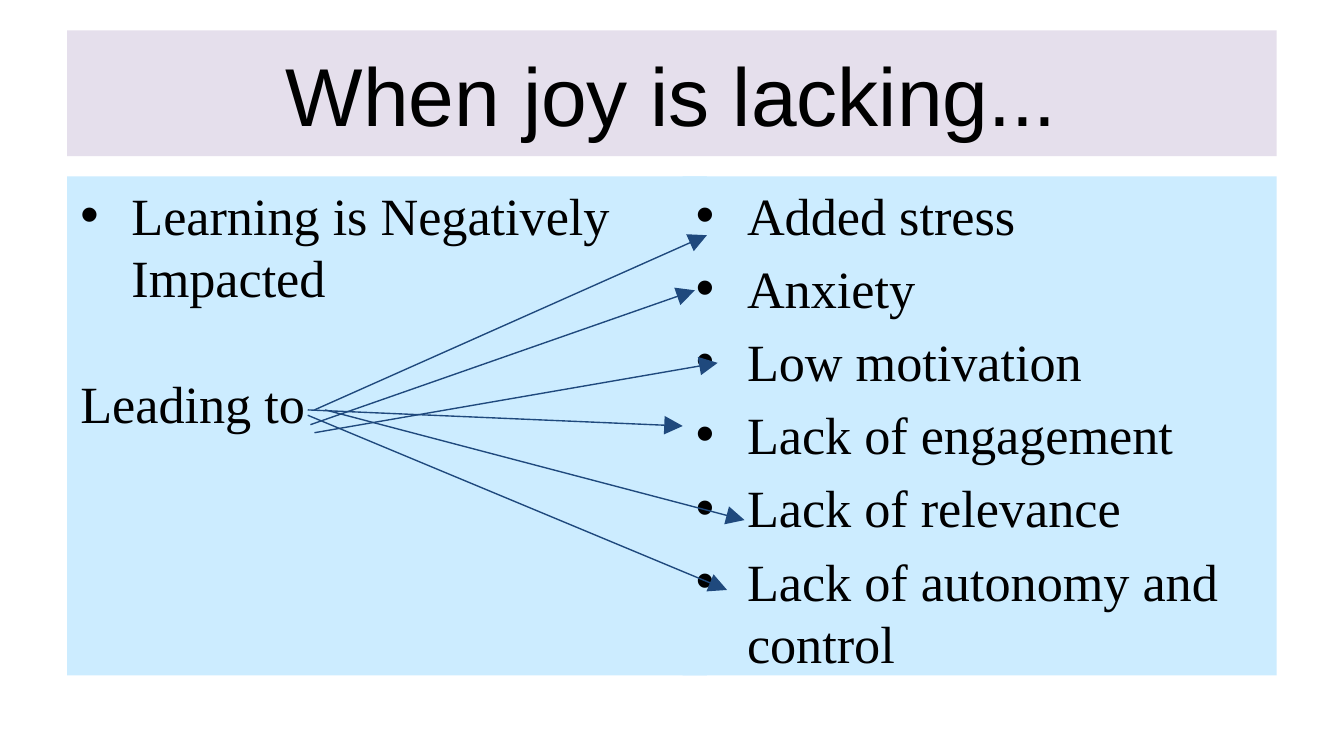
import pptx
import pptx.util
import pptx.dml.color
import pptx.enum.shapes
import pptx.enum.text
import pptx.oxml.ns
import lxml.etree

Inches = pptx.util.Inches
Pt = pptx.util.Pt
RGBColor = pptx.dml.color.RGBColor

BLACK = RGBColor(0x00, 0x00, 0x00)
LAVENDER = RGBColor(0xE5, 0xDF, 0xEC)
PALE_BLUE = RGBColor(0xCC, 0xEC, 0xFF)
NAVY = RGBColor(0x1F, 0x49, 0x7D)

WIDTH = 10
HEIGHT = WIDTH * 9 / 16
MARGIN = WIDTH * 0.05
PANEL_TOP, PANEL_HEIGHT = HEIGHT * 7 / 30, HEIGHT * 0.66
BODY_SIZE, BODY_LINE = 28, 33.6
HANGING = 0.38


def add_run(paragraph, text, font_name, size):
    run = paragraph.add_run()
    run.text = text
    run.font.name = font_name
    run.font.size = Pt(size)
    run.font.color.rgb = BLACK


def add_child(parent, tag, **attributes):
    child = lxml.etree.SubElement(parent, pptx.oxml.ns.qn(tag))
    for name, value in attributes.items():
        child.set(name, value)
    return child


presentation = pptx.Presentation()
presentation.slide_width = Inches(WIDTH)
presentation.slide_height = Inches(HEIGHT)
slide = presentation.slides.add_slide(presentation.slide_layouts[5])

# Title band
title = slide.shapes.title
title.left, title.top = Inches(MARGIN), Inches(HEIGHT * 0.04)
title.width, title.height = Inches(WIDTH - 2 * MARGIN), Inches(HEIGHT / 6)
title.fill.solid()
title.fill.fore_color.rgb = LAVENDER
title.text_frame.vertical_anchor = pptx.enum.text.MSO_ANCHOR.MIDDLE
paragraph = title.text_frame.paragraphs[0]
paragraph.alignment = pptx.enum.text.PP_ALIGN.CENTER
add_run(paragraph, "When joy is lacking...", "Arial", 44)

# Cause and effect panels: left, width, then (text, bulleted, space before)
effects = ["Added stress", "Anxiety", "Low motivation", "Lack of engagement",
           "Lack of relevance", "Lack of autonomy and control"]
panels = [
    (MARGIN, 4.76, [("Learning is Negatively Impacted", True, 0),
                    ("Leading to", False, BODY_LINE)]),
    (5.08, 4.42, [(effect, True, 5.6 if index else 0)
                  for index, effect in enumerate(effects)]),
]
for left, width, items in panels:
    panel = slide.shapes.add_textbox(Inches(left), Inches(PANEL_TOP),
                                     Inches(width), Inches(PANEL_HEIGHT))
    panel.fill.solid()
    panel.fill.fore_color.rgb = PALE_BLUE
    frame = panel.text_frame
    frame.word_wrap = True
    for index, (text, bulleted, space_before) in enumerate(items):
        paragraph = frame.add_paragraph() if index else frame.paragraphs[0]
        paragraph.line_spacing = Pt(BODY_LINE)
        paragraph.space_before = Pt(space_before)
        add_run(paragraph, text, "Times New Roman", BODY_SIZE)
        if bulleted:
            properties = paragraph._p.get_or_add_pPr()
            properties.set("marL", str(Inches(HANGING)))
            properties.set("indent", str(-Inches(HANGING)))
            color = add_child(properties, "a:buClr")
            add_child(color, "a:srgbClr", val=str(BLACK))
            add_child(properties, "a:buFont", typeface="Arial")
            add_child(properties, "a:buChar", char="•")

# Arrows from "Leading to" out to each effect
arrows = [
    ((2.34, 3.05), (5.26, 1.75)),
    ((2.31, 3.16), (5.17, 2.16)),
    ((2.34, 3.22), (5.34, 2.70)),
    ((2.29, 3.05), (5.08, 3.17)),
    ((2.42, 3.05), (5.54, 3.87)),
    ((2.29, 3.09), (5.41, 4.39)),
]
for start, end in arrows:
    arrow = slide.shapes.add_connector(
        pptx.enum.shapes.MSO_CONNECTOR.STRAIGHT,
        *[Inches(value) for value in start + end])
    arrow.line.color.rgb = NAVY
    arrow.line.width = Pt(0.75)
    add_child(arrow.line._get_or_add_ln(), "a:tailEnd",
              type="triangle", w="lg", len="lg")
    add_child(arrow._element.spPr, "a:effectLst")

presentation.save("out.pptx")
